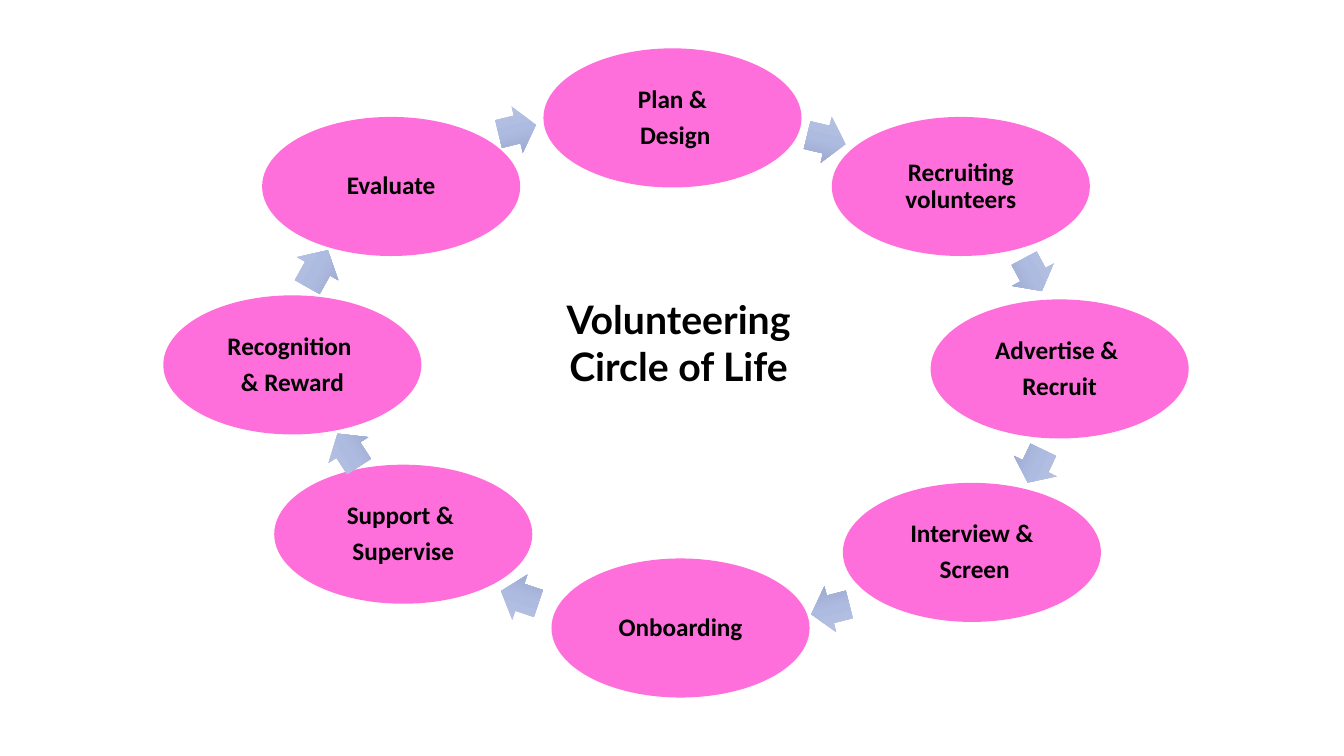
from copy import deepcopy

from lxml.etree import SubElement
from pptx import Presentation
from pptx.dml.color import RGBColor
from pptx.enum.shapes import MSO_SHAPE as SHAPE
from pptx.enum.text import MSO_ANCHOR as ANCHOR, MSO_AUTO_SIZE as AUTO, PP_ALIGN as ALIGN
from pptx.oxml.ns import qn
from pptx.util import Inches, Pt

COLORS = {
    "stage": "FF33CC",
    "text": "000000",
    "arrow_light": "BBC5E3",
    "arrow_mid": "AEBBE0",
    "arrow_dark": "98A4CB",
}

STAGE_SIZE = (2.56, 1.38)
ARROW_HEIGHT = 0.47

STAGES = [
    (5.39, 0.48, "Plan &\n Design"),
    (8.25, 1.16, "Recruiting volunteers"),
    (9.23, 2.97, "Advertise & \nRecruit"),
    (8.36, 4.79, "Interview &\n Screen"),
    (5.47, 5.54, "Onboarding"),
    (2.72, 4.61, "Support & \nSupervise"),
    (1.62, 2.93, "Recognition \n& Reward"),
    (2.6, 1.16, "Evaluate"),
]

ARROWS = [
    (8, 1.15, 0.39, 13.4),
    (10.06, 2.49, 0.37, 61.6),
    (10.09, 4.39, 0.36, 115.5),
    (8.04, 5.81, 0.39, 165.5),
    (4.96, 5.69, 0.39, 198.5),
    (3.26, 4.23, 0.39, 236.9),
    (2.94, 2.43, 0.42, 299.2),
    (4.94, 1.05, 0.38, 346.2),
]


def rgb(name):
    return RGBColor.from_string(COLORS[name])


def write_text(tf, text, font, size):
    tf.word_wrap = True
    tf.text = text
    for p in tf.paragraphs:
        p.alignment = ALIGN.CENTER
        for r in p.runs:
            r.font.name = font
            r.font.size = Pt(size)
            r.font.bold = True
            r.font.color.rgb = rgb("text")


def add_plain_shape(slide, kind, left, top, width, height):
    sp = slide.shapes.add_shape(
        kind, Inches(left), Inches(top), Inches(width), Inches(height))
    sp.shadow.inherit = False
    sp.line.fill.background()
    return sp


def add_stage(slide, left, top, text):
    sp = add_plain_shape(slide, SHAPE.OVAL, left, top, *STAGE_SIZE)
    sp.fill.solid()
    sp.fill.fore_color.rgb = rgb("stage")
    color = sp.fill._xPr.find(qn("a:solidFill"))[0]
    SubElement(color, qn("a:alpha"), val="70000")
    tf = sp.text_frame
    tf.margin_left = tf.margin_right = Inches(0.03)
    tf.margin_top = tf.margin_bottom = Inches(0.03)
    tf.vertical_anchor = ANCHOR.MIDDLE
    write_text(tf, text, "Calibri", 18)
    for p in tf.paragraphs:
        p.line_spacing = 0.9
        p.space_after = Pt(6.3)


def add_arrow(slide, left, top, width, rotation):
    sp = add_plain_shape(slide, SHAPE.RIGHT_ARROW, left, top, width, ARROW_HEIGHT)
    sp.rotation = rotation
    sp.adjustments[0] = 0.6
    sp.adjustments[1] = 0.5
    sp.fill.gradient()
    sp.fill.gradient_angle = 270
    stop_list = sp.fill._xPr.find(qn("a:gradFill")).find(qn("a:gsLst"))
    stop_list.insert(1, deepcopy(stop_list[0]))
    names = ("arrow_light", "arrow_mid", "arrow_dark")
    for stop, position, name in zip(sp.fill.gradient_stops, (0, 0.5, 1), names):
        stop.position = position
        stop.color.rgb = rgb(name)


def set_title(slide, text):
    title = slide.shapes.title
    title.left, title.top = Inches(5.08), Inches(2.88)
    title.width, title.height = Inches(3.3), Inches(1.04)
    tf = title.text_frame
    tf.auto_size = AUTO.SHAPE_TO_FIT_TEXT
    tf.vertical_anchor = ANCHOR.TOP
    write_text(tf, text, "Lato", 28)


def main():
    prs = Presentation()
    prs.slide_width, prs.slide_height = Inches(13.33), Inches(7.5)
    slide = prs.slides.add_slide(prs.slide_layouts[5])
    for stage, arrow in zip(STAGES, ARROWS):
        add_stage(slide, *stage)
        add_arrow(slide, *arrow)
    set_title(slide, "Volunteering\nCircle of Life")
    prs.save("out.pptx")


if __name__ == "__main__":
    main()
